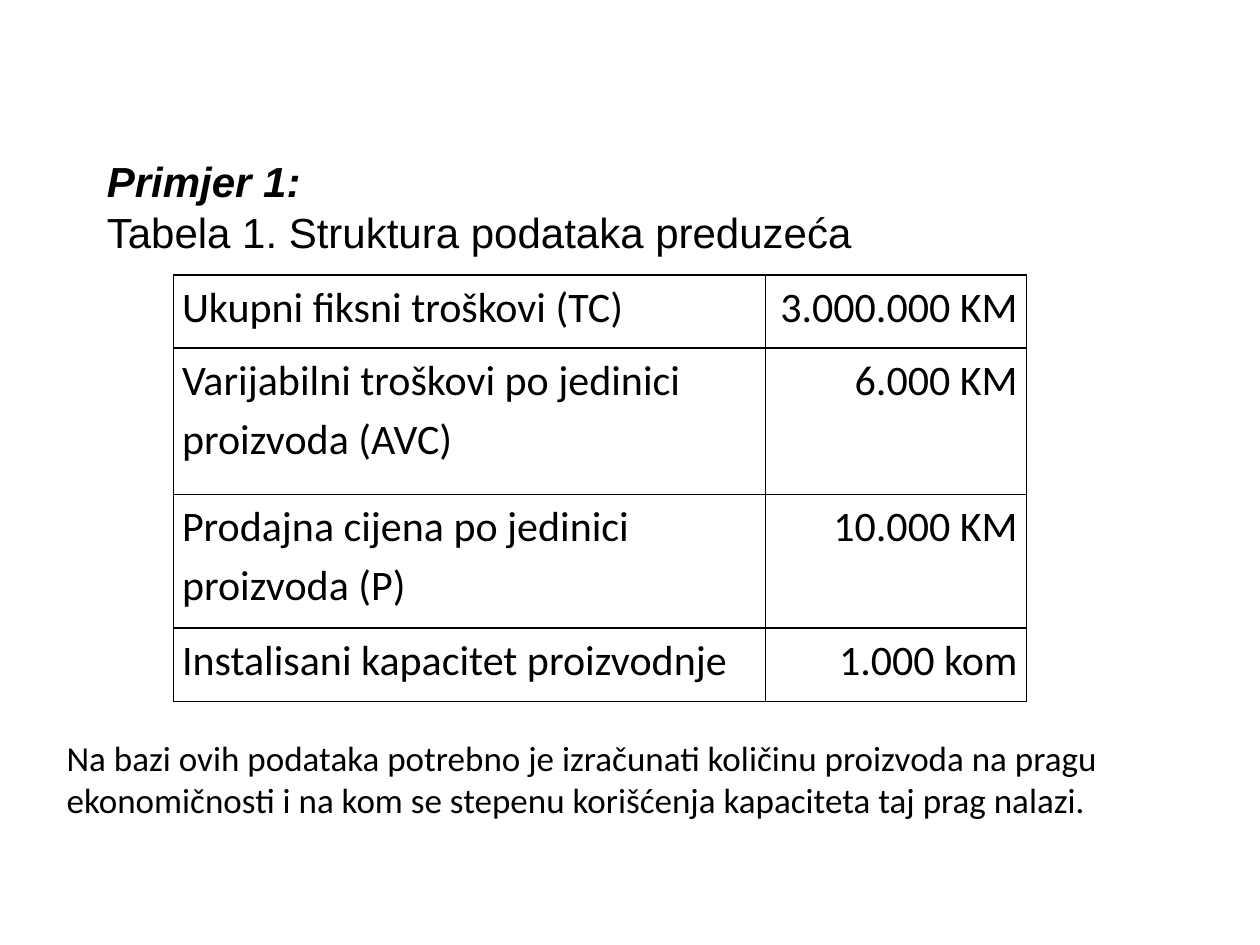
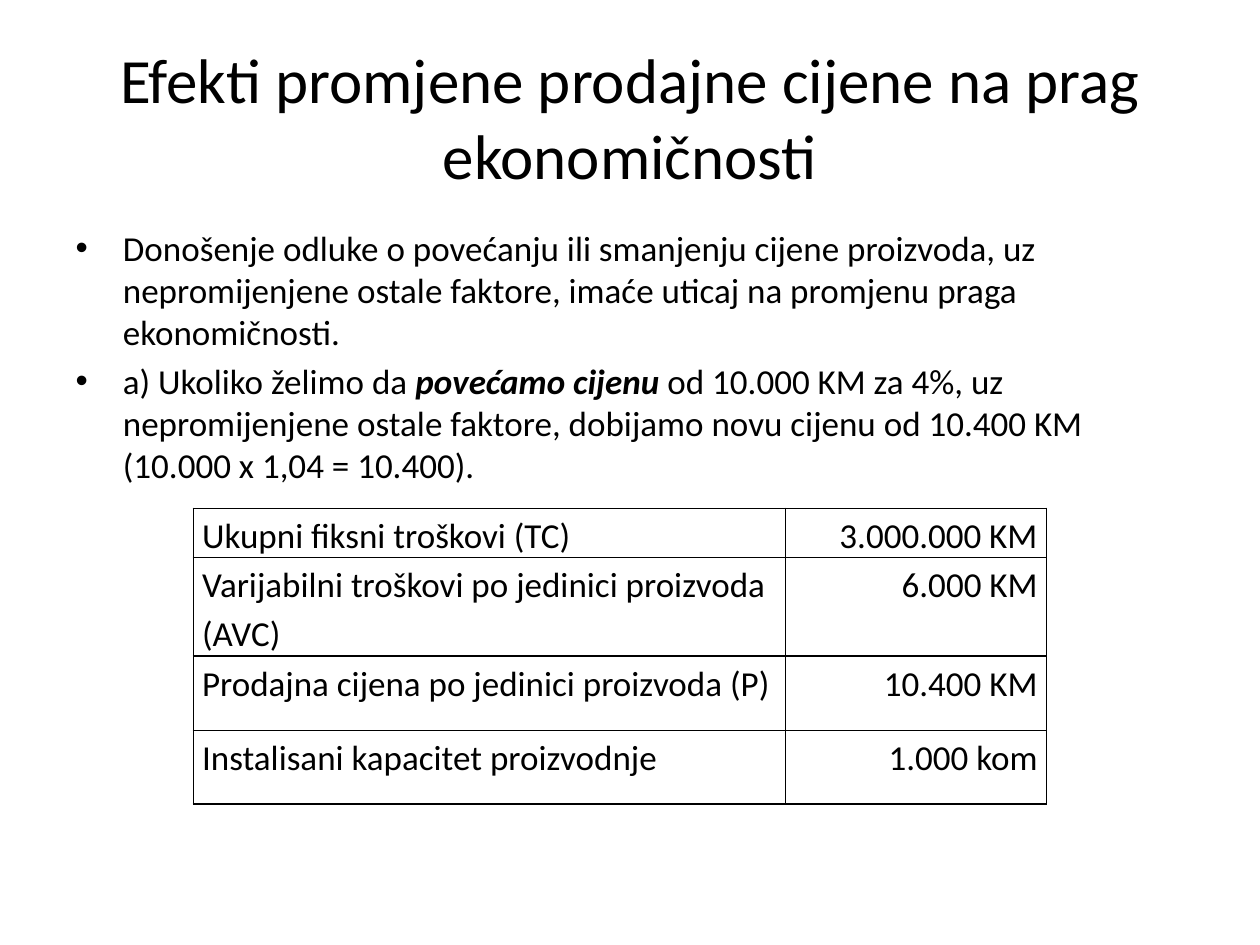
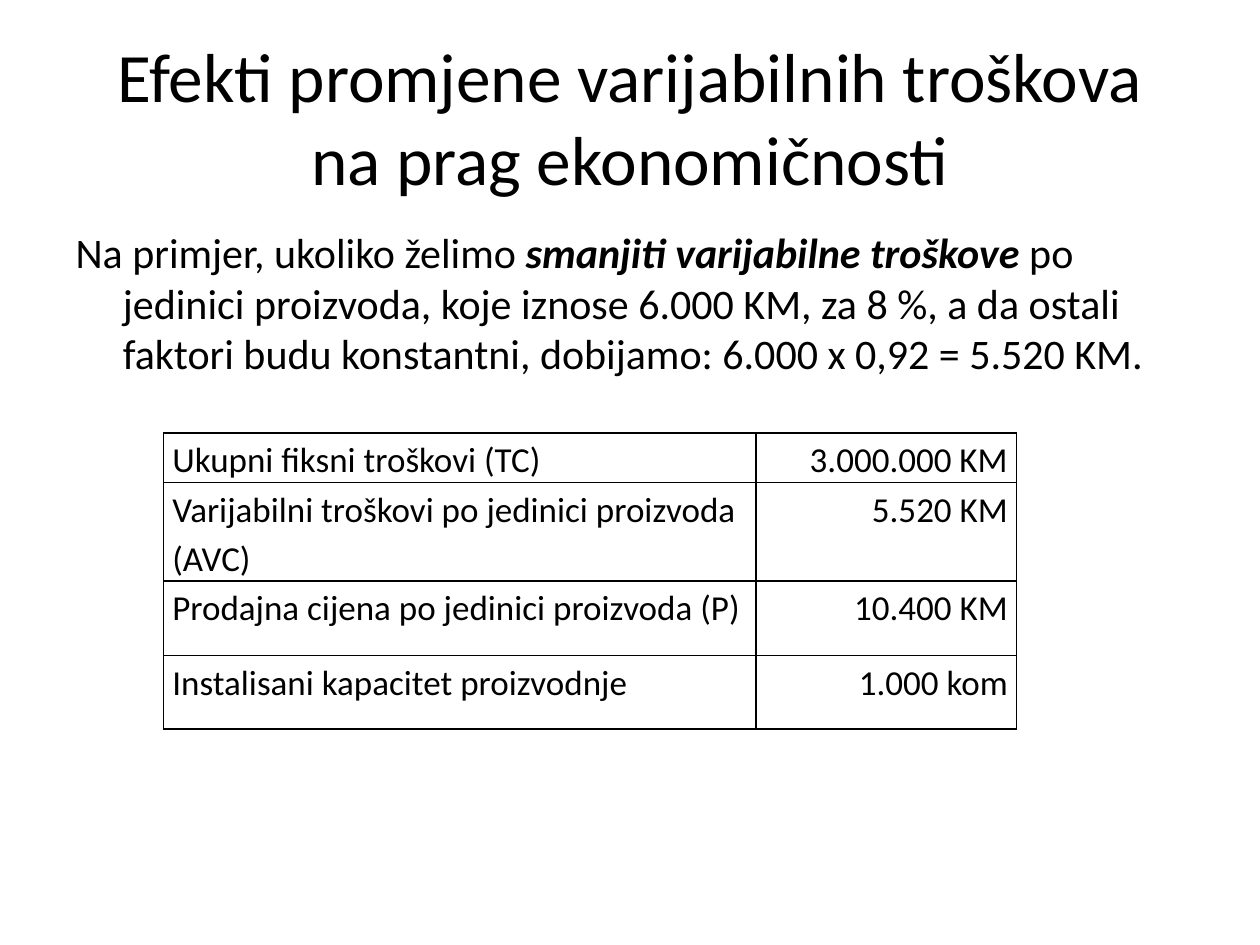
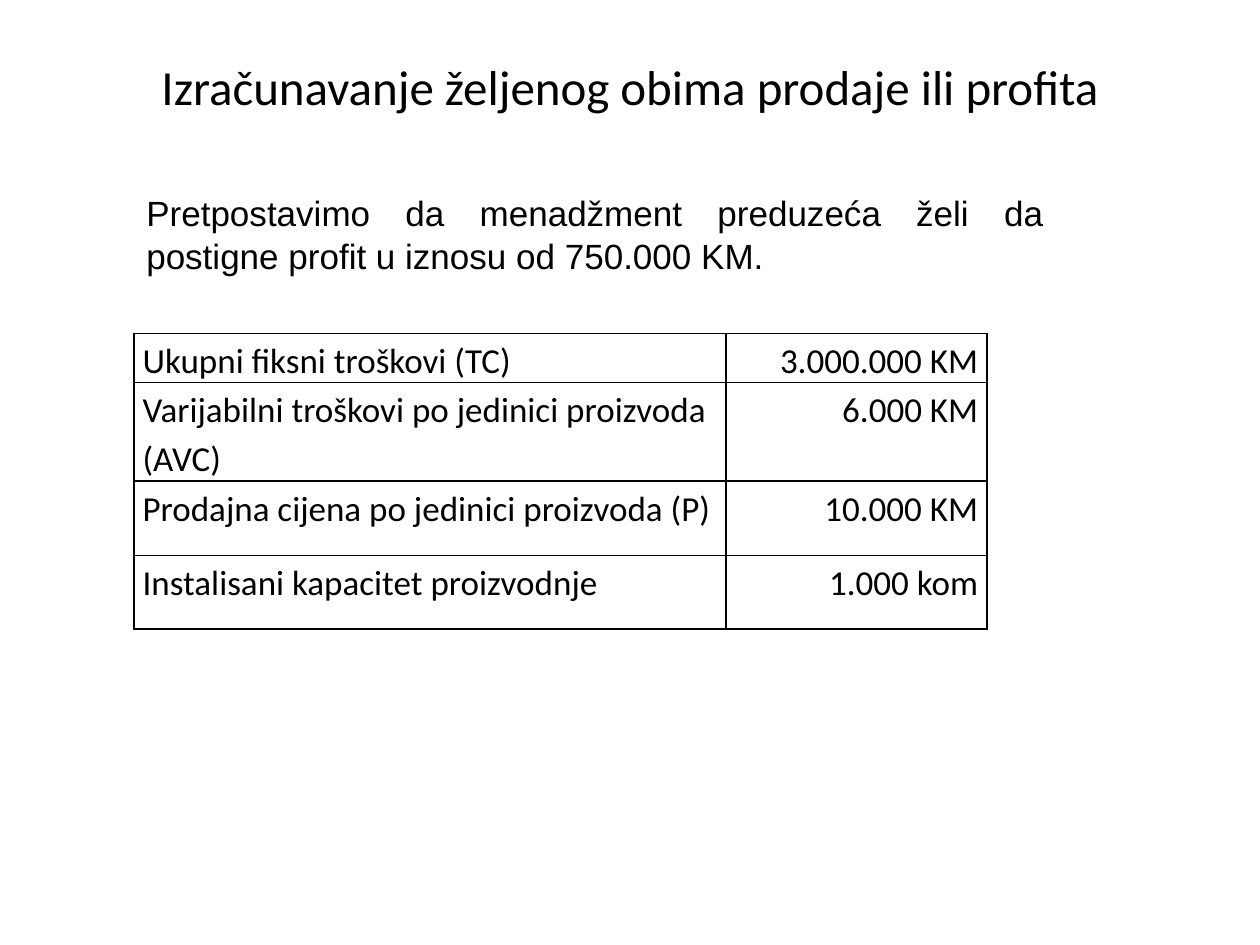
import pptx
import pptx.dml.color
import pptx.enum.text
import pptx.oxml
import pptx.oxml.ns
import pptx.util
from dataclasses import dataclass

Pt = pptx.util.Pt
ALIGN = pptx.enum.text.PP_ALIGN
ANCHOR = pptx.enum.text.MSO_ANCHOR
AUTO_SIZE = pptx.enum.text.MSO_AUTO_SIZE


@dataclass(frozen=True)
class Theme:
    ink: pptx.dml.color.RGBColor = pptx.dml.color.RGBColor(0, 0, 0)
    main_font: str = "Calibri"
    note_font: str = "Arial"
    large: float = 24
    normal: float = 20
    price_title: float = 36
    cost_title: float = 39.6
    profit_title: float = 28
    line_spacing: float = 1.15
    border: float = 1
    cell_inset: float = 5


theme = Theme()


def write(frame, lines, size, font=theme.main_font, align=None):
    """Fill a text frame, one paragraph a line; *stars* mark bold italics."""
    for number, line in enumerate(lines):
        paragraph = frame.paragraphs[0] if number == 0 else frame.add_paragraph()
        paragraph.alignment = align
        for position, piece in enumerate(line.split("*")):
            if not piece:
                continue
            run = paragraph.add_run()
            run.text = piece
            run.font.name = font
            run.font.size = Pt(size)
            run.font.bold = run.font.italic = position % 2 == 1
            run.font.color.rgb = theme.ink


def add_cost_table(slide, left, top, variable_cost, price, row_heights, size):
    """Add the bordered table of costs, price and capacity."""
    entries = [
        ("Ukupni fiksni troškovi (TC)", "3.000.000 KM"),
        ("Varijabilni troškovi po jedinici proizvoda (AVC)", variable_cost),
        ("Prodajna cijena po jedinici proizvoda (P)", price),
        ("Instalisani kapacitet proizvodnje", "1.000 kom"),
    ]
    widths = (338.5, 149)
    costs = slide.shapes.add_table(len(entries), len(widths), Pt(left), Pt(top),
                                   Pt(sum(widths)), Pt(sum(row_heights))).table
    costs.first_row = costs.horz_banding = False
    for column, width in zip(costs.columns, widths):
        column.width = Pt(width)
    for row, height, entry in zip(costs.rows, row_heights, entries):
        row.height = Pt(height)
        for cell, text, align in zip(row.cells, entry, (ALIGN.LEFT, ALIGN.RIGHT)):
            cell.margin_left = cell.margin_right = Pt(theme.cell_inset)
            cell.margin_top = cell.margin_bottom = 0
            write(cell.text_frame, [text], size, align=align)
            cell.text_frame.paragraphs[0].line_spacing = theme.line_spacing
            cell.fill.background()
            # Borders come before the fill in the cell properties
            properties = cell._tc.get_or_add_tcPr()
            for place, side in enumerate("LRTB"):
                properties.insert(place, pptx.oxml.parse_xml(
                    f'<a:ln{side} {pptx.oxml.ns.nsdecls("a")} w="{Pt(theme.border)}">'
                    f'<a:solidFill><a:srgbClr val="{theme.ink}"/></a:solidFill>'
                    f'</a:ln{side}>'))


presentation = pptx.Presentation()
presentation.slide_width, presentation.slide_height = Pt(720), Pt(540)
text_layout, title_layout, blank_layout = (presentation.slide_layouts[i] for i in (1, 5, 6))
tall_rows = (42, 83.5, 76.5, 42)
compact_rows = (28, 51, 42.5, 42)

# Slides and their tables
example, price_effect, cost_effect, profit = (
    presentation.slides.add_slide(layout)
    for layout in (blank_layout, text_layout, text_layout, title_layout))
for slide, left, top, variable_cost, price, row_heights, size in (
    (example, 99, 157, "6.000 KM", "10.000 KM", tall_rows, theme.large),
    (price_effect, 110.5, 290.5, "6.000 KM", "10.400 KM", compact_rows, theme.normal),
    (cost_effect, 93.5, 247.5, "5.520 KM", "10.400 KM", compact_rows, theme.normal),
    (profit, 76.5, 190.5, "6.000 KM", "10.000 KM", compact_rows, theme.normal),
):
    add_cost_table(slide, left, top, variable_cost, price, row_heights, size)

# Titles
for slide, height, size, heading in (
    (price_effect, 90, theme.price_title,
     "Efekti promjene prodajne cijene na prag ekonomičnosti"),
    (cost_effect, 90, theme.cost_title,
     "Efekti promjene varijabilnih troškova na prag ekonomičnosti"),
    (profit, 55.5, theme.profit_title,
     "Izračunavanje željenog obima prodaje ili profita"),
):
    title = slide.shapes.title
    title.left, title.top, title.width, title.height = Pt(36), Pt(21.6), Pt(648), Pt(height)
    title.text_frame.auto_size = AUTO_SIZE.NONE
    title.text_frame.vertical_anchor = ANCHOR.MIDDLE
    write(title.text_frame, [heading], size, align=ALIGN.CENTER)

# Body texts
for slide, height, size, lines in (
    (price_effect, 166.5, theme.normal, [
        "Donošenje odluke o povećanju ili smanjenju cijene proizvoda, uz "
        "nepromijenjene ostale faktore, imaće uticaj na promjenu praga ekonomičnosti.",
        "a) Ukoliko želimo da *povećamo cijenu* od 10.000 KM za 4%, uz "
        "nepromijenjene ostale faktore, dobijamo novu cijenu od 10.400 KM "
        "(10.000 x 1,04 = 10.400)."]),
    (cost_effect, 104.5, theme.large, [
        "Na primjer, ukoliko želimo *smanjiti varijabilne troškove* po jedinici "
        "proizvoda, koje iznose 6.000 KM, za 8 %, a da ostali faktori budu "
        "konstantni, dobijamo: 6.000 x 0,92 = 5.520 KM."]),
):
    body = slide.placeholders[1]
    body.left, body.top, body.width, body.height = Pt(36), Pt(126), Pt(648), Pt(height)
    body.text_frame.auto_size = AUTO_SIZE.NONE
    write(body.text_frame, lines, size)

# The cost effect keeps its hanging indent but has no bullet
cost_paragraph = cost_effect.placeholders[1].text_frame.paragraphs[0]
cost_paragraph._p.get_or_add_pPr().append(
    pptx.oxml.parse_xml(f'<a:buNone {pptx.oxml.ns.nsdecls("a")}/>'))

# Notes around the tables
for slide, box, anchor, align, font, size, lines in (
    (example, (54, 85, 528.5, 65.5), ANCHOR.MIDDLE, ALIGN.JUSTIFY,
     theme.note_font, theme.large,
     ["*Primjer 1:*", "Tabela 1. Struktura podataka preduzeća"]),
    (example, (31, 417.5, 607, 55.5), ANCHOR.TOP, ALIGN.LEFT,
     theme.main_font, theme.normal,
     ["Na bazi ovih podataka potrebno je izračunati količinu proizvoda na pragu "
      "ekonomičnosti i na kom se stepenu korišćenja kapaciteta taj prag nalazi."]),
    (profit, (76.5, 106, 527, 55.5), ANCHOR.MIDDLE, ALIGN.JUSTIFY,
     theme.note_font, theme.normal,
     ["Pretpostavimo da menadžment preduzeća želi da postigne profit u iznosu "
      "od 750.000 KM."]),
):
    note = slide.shapes.add_textbox(*map(Pt, box)).text_frame
    note.word_wrap = True
    note.auto_size = AUTO_SIZE.SHAPE_TO_FIT_TEXT
    note.vertical_anchor = anchor
    write(note, lines, size, font, align)

presentation.save("out.pptx")
